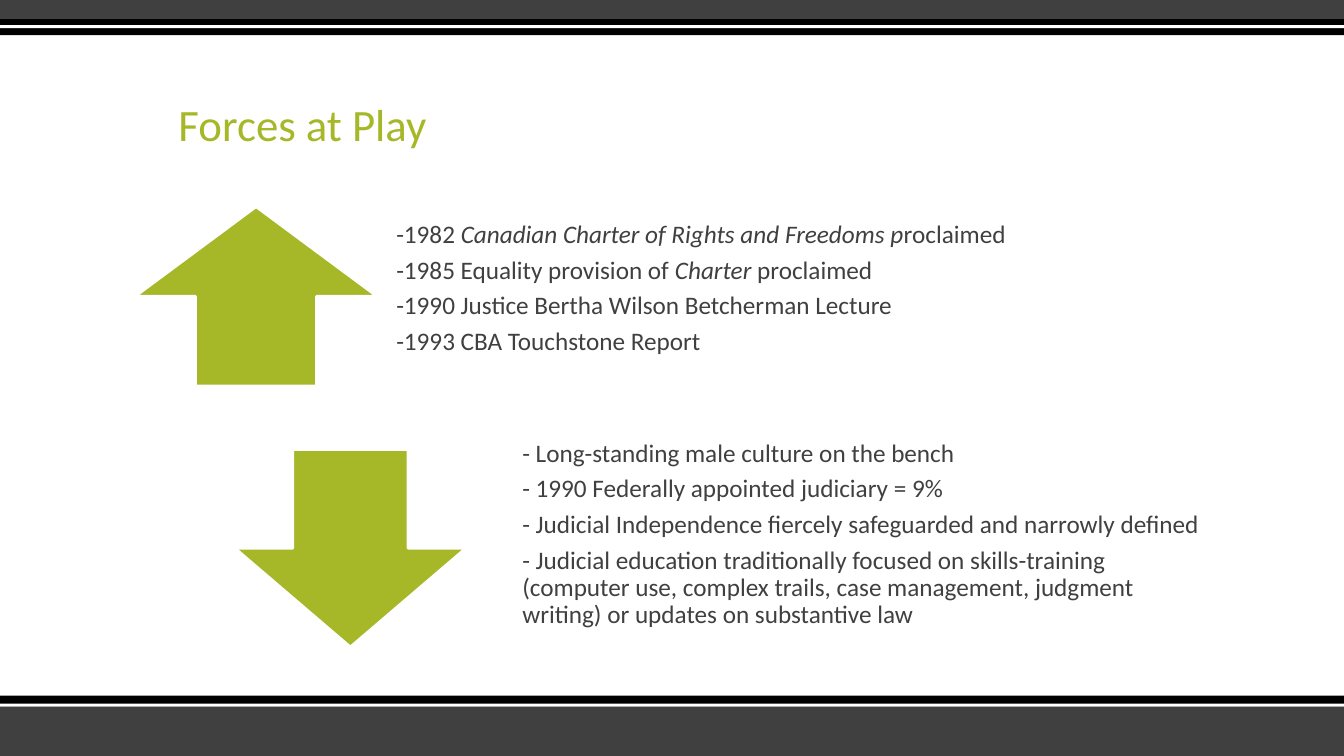
from pptx import Presentation
from pptx.dml.color import RGBColor
from pptx.enum.shapes import MSO_SHAPE
from pptx.enum.text import MSO_ANCHOR, MSO_AUTO_SIZE, PP_ALIGN
from pptx.util import Inches, Pt
from lxml.etree import SubElement
from pptx.oxml.ns import qn

# Content: each line is a list of (text, italic) spans
TITLE = "Forces at Play"
FORCES_UP = [
    [("-1982 ", False), ("Canadian Charter of Rights and Freedoms p", True), ("roclaimed", False)],
    [("-1985 Equality provision of ", False), ("Charter", True), (" proclaimed", False)],
    [("-1990 Justice Bertha Wilson Betcherman Lecture", False)],
    [("-1993 CBA Touchstone Report", False)],
]
FORCES_DOWN = [
    [("- Long-standing male culture on the bench", False)],
    [("- 1990 Federally appointed judiciary = 9%", False)],
    [("- Judicial Independence fiercely safeguarded and narrowly defined", False)],
    [("- Judicial education traditionally focused on skills-training (computer use, "
      "complex trails, case management, judgment writing) or updates on substantive law", False)],
]
COLORS = {"green": "A6B727", "gray": "404040", "black": "000000", "white": "FFFFFF"}
FONT = "Calibri"
WIDTH, HEIGHT = 13.33, 7.5

# Horizontal bands: top, height, colour
BANDS = [
    (7, 0.5, "gray"), (6.9, 0.11, "black"), (6.98, 0.03, "white"),
    (0, 0.19, "gray"), (0.19, 0.16, "black"), (0.25, 0.03, "white"),
]

# Each force: arrow preset, arrow box, list left edge, lines
FORCES = [
    (MSO_SHAPE.UP_ARROW, (1.34, 2.05, 2.4, 1.78), 3.79, FORCES_UP),
    (MSO_SHAPE.DOWN_ARROW, (2.33, 4.46, 2.29, 1.96), 5.04, FORCES_DOWN),
]
LIST_TOP, LIST_HEIGHT, LIST_STEP, LIST_RIGHT = 1.78, 2.31, 2.44, 12.18


def color(name):
    return RGBColor.from_string(COLORS[name])


def add_block(kind, bounds, fill, line=None):
    shape = slide.shapes.add_shape(kind, *map(Inches, bounds))
    shape.shadow.inherit = False
    shape.fill.solid()
    shape.fill.fore_color.rgb = color(fill)
    if line:
        shape.line.color.rgb = color(line)
        shape.line.width = Pt(2)
    else:
        shape.line.fill.background()


def fill_text(box, bounds, lines, *, size, ink, anchor, after=0):
    box.left, box.top, box.width, box.height = map(Inches, bounds)
    frame = box.text_frame
    frame.word_wrap = True
    frame.auto_size = MSO_AUTO_SIZE.NONE
    frame.vertical_anchor = anchor
    for number, spans in enumerate(lines):
        para = frame.add_paragraph() if number else frame.paragraphs[0]
        para.alignment = PP_ALIGN.LEFT
        para.line_spacing = 0.9
        para.space_before, para.space_after = Pt(0), Pt(after)
        properties = para._p.get_or_add_pPr()
        properties.set("marL", "0")
        properties.set("indent", "0")
        SubElement(properties, qn("a:buNone"))
        for text, italic in spans:
            span = para.add_run()
            span.text = text
            span.font.name, span.font.size = FONT, Pt(size)
            span.font.italic = italic
            span.font.color.rgb = color(ink)
    return frame


deck = Presentation()
deck.slide_width, deck.slide_height = Inches(WIDTH), Inches(HEIGHT)
slide = deck.slides.add_slide(deck.slide_layouts[3])
title, *lists = slide.placeholders

# Bands and title
for top, height, fill in BANDS:
    add_block(MSO_SHAPE.RECTANGLE, (0, top, WIDTH, height), fill)
fill_text(title, (1.67, 0.67, 10, 0.88), [[(TITLE, False)]],
          size=32, ink="green", anchor=MSO_ANCHOR.BOTTOM)

# Arrows with their lists
for row, (box, (kind, arrow, left, lines)) in enumerate(zip(lists, FORCES)):
    add_block(kind, arrow, "green", line="white")
    bounds = (left, LIST_TOP + row * LIST_STEP, LIST_RIGHT - left, LIST_HEIGHT)
    frame = fill_text(box, bounds, lines, size=18, ink="gray",
                      anchor=MSO_ANCHOR.MIDDLE, after=6)
    frame.margin_left = frame.margin_right = frame.margin_bottom = Inches(0.14)
    frame.margin_top = 0

deck.save("out.pptx")
